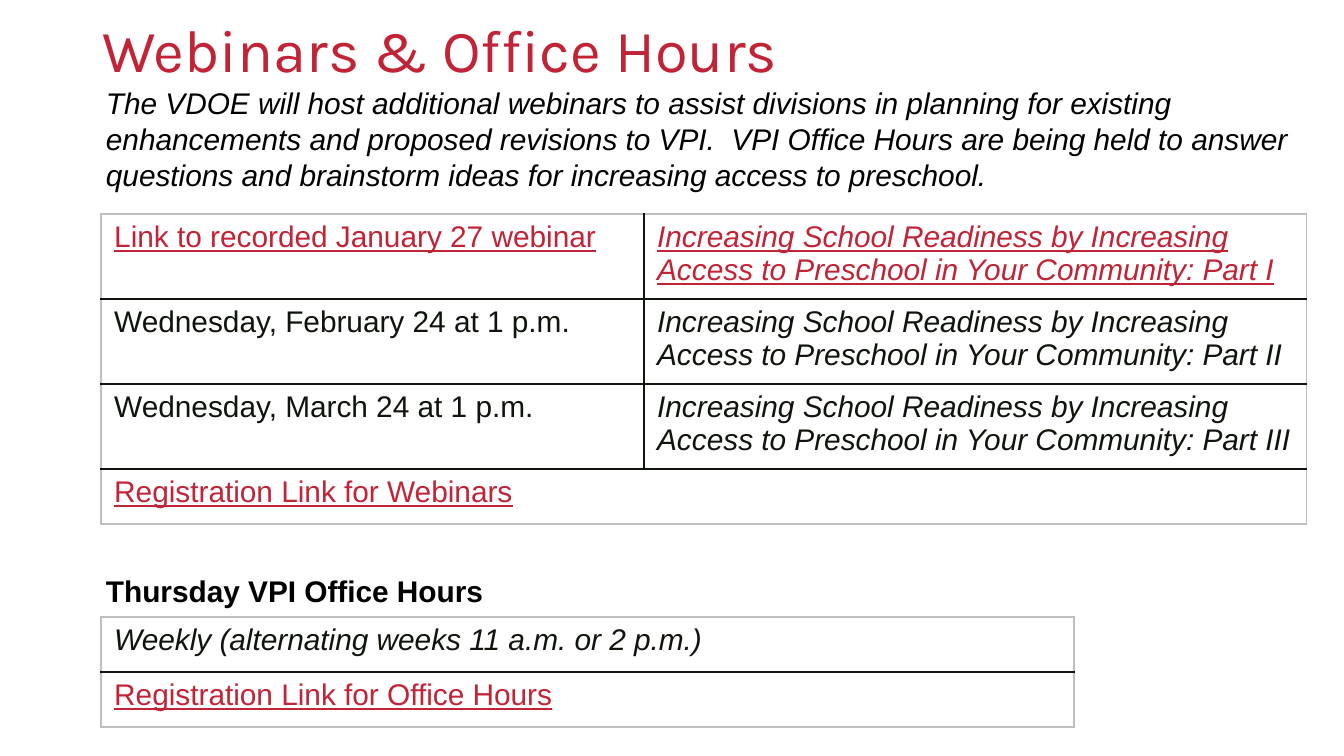
import pptx
import pptx.dml.color
import pptx.enum.text
import pptx.oxml
import pptx.oxml.ns
import pptx.util
from pptx.util import Inches

RED, INK, BLACK, GREY = "C12436", "0F150D", "000000", "BFBFBF"


def style(para, color, size=16, name="Arial", **flags):
    font = para.font
    font.size, font.name = pptx.util.Pt(size), name
    font.color.rgb = pptx.dml.color.RGBColor.from_string(color)
    for flag, value in flags.items():
        setattr(font, flag, value)


def add_schedule(page, top, widths, heights, rows):
    """Add a table whose cells are (text, color, flags), grey outside and dark inside."""
    frame = page.shapes.add_table(len(rows), len(widths), Inches(0.75), Inches(top),
                                  Inches(sum(widths)), Inches(sum(heights)))
    table = frame.table
    table.first_row = table.horz_banding = False
    for column, width in zip(table.columns, widths):
        column.width = Inches(width)
    for row, height in zip(table.rows, heights):
        row.height = Inches(height)
    last_row, last_column = len(rows) - 1, len(widths) - 1
    for r, entries in enumerate(rows):
        if len(entries) < len(widths):
            table.cell(r, 0).merge(table.cell(r, last_column))
        for c in range(len(widths)):
            cell = table.cell(r, c)
            cell.fill.background()
            outer = {"lnL": c == 0 or cell.is_spanned,
                     "lnR": c == last_column or cell.is_merge_origin,
                     "lnT": r == 0, "lnB": r == last_row}
            properties = cell._tc.get_or_add_tcPr()
            for position, (side, is_outer) in enumerate(outer.items()):
                properties.insert(position, pptx.oxml.parse_xml(
                    f'<a:{side} {pptx.oxml.ns.nsdecls("a")} w="12700"><a:solidFill>'
                    f'<a:srgbClr val="{GREY if is_outer else INK}"/></a:solidFill></a:{side}>'))
            if c < len(entries):
                text, color, flags = entries[c]
                cell.text = text
                style(cell.text_frame.paragraphs[0], color, **flags)


deck = pptx.Presentation()
deck.slide_width = Inches(10)
deck.slide_height = deck.slide_width * 9 // 16
page = deck.slides.add_slide(deck.slide_layouts[5])

title = page.shapes.title
title.left, title.top, title.width, title.height = (
    Inches(0.69), Inches(0), Inches(8.62), Inches(0.79))
frame = title.text_frame
frame.text = "Webinars & Office Hours"
frame.vertical_anchor = pptx.enum.text.MSO_ANCHOR.MIDDLE
frame.auto_size = pptx.enum.text.MSO_AUTO_SIZE.NONE
frame.margin_left = frame.margin_right = Inches(0.07)
frame.margin_top = frame.margin_bottom = Inches(0.04)
para = frame.paragraphs[0]
para.alignment = pptx.enum.text.PP_ALIGN.LEFT
para.line_spacing = 0.9
style(para, RED, 32, "Karla")

introduction = (
    "The VDOE will host additional webinars to assist divisions in planning for existing "
    "enhancements and proposed revisions to VPI.  VPI Office Hours are being held to answer "
    "questions and brainstorm ideas for increasing access to preschool.")
for text, top, width, height, flags in [
    (introduction, 0.58, 9.1, 0.91, {"italic": True}),
    ("Thursday VPI Office Hours", 4.21, 4.19, 0.37, {"bold": True}),
]:
    box = page.shapes.add_textbox(Inches(0.69), Inches(top), Inches(width), Inches(height))
    box.text_frame.word_wrap = True
    box.text_frame.text = text
    style(box.text_frame.paragraphs[0], BLACK, **flags)

link, italic = {"underline": True}, {"italic": True}
series = "Increasing School Readiness by Increasing Access to Preschool in Your Community: Part "
add_schedule(page, 1.59, [4.04, 4.93], [0.63, 0.63, 0.63, 0.41], [
    [("Link to recorded January 27 webinar", RED, link), (series + "I", RED, link | italic)],
    [("Wednesday, February 24 at 1 p.m.", INK, {}), (series + "II", INK, italic)],
    [("Wednesday, March 24 at 1 p.m.", INK, {}), (series + "III", INK, italic)],
    [("Registration Link for Webinars", RED, link)],
])
add_schedule(page, 4.59, [7.24], [0.41, 0.41], [
    [("Weekly (alternating weeks 11 a.m. or 2 p.m.)", INK, italic)],
    [("Registration Link for Office Hours", RED, link)],
])

deck.save("out.pptx")
